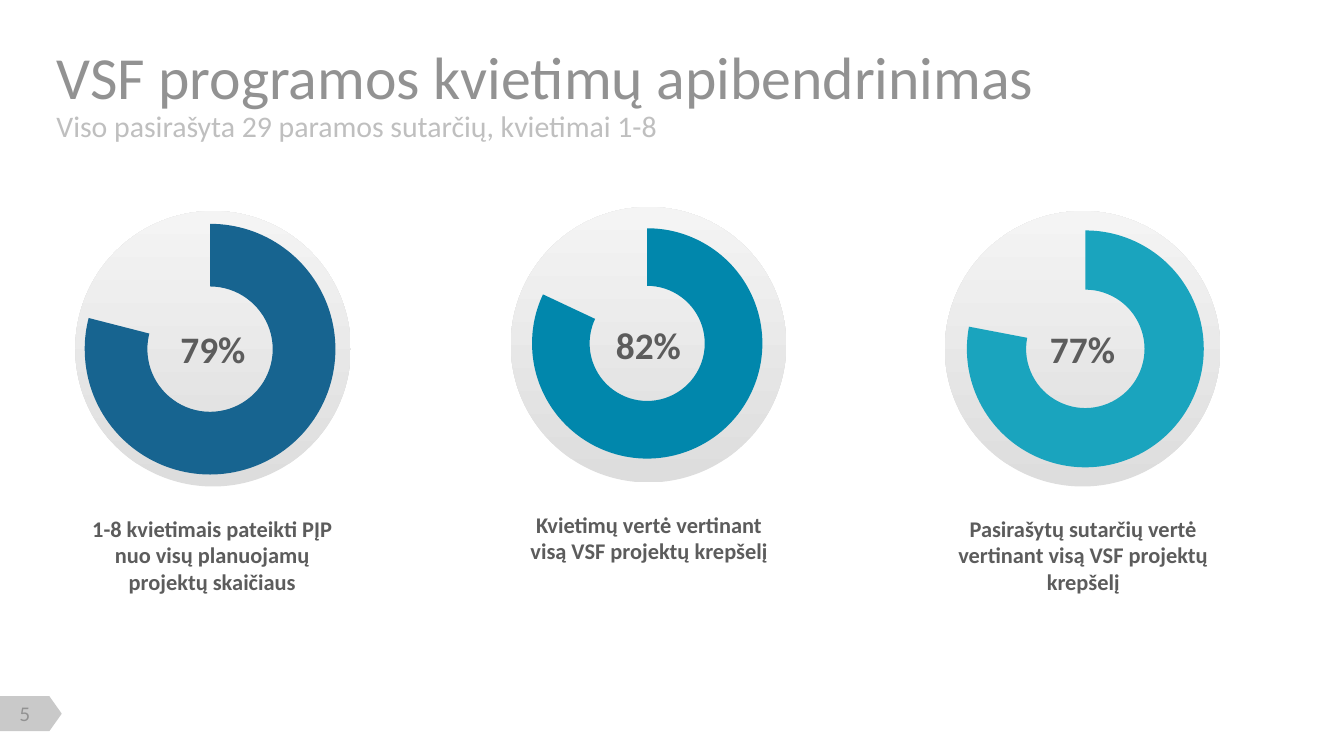
from dataclasses import dataclass

from lxml.etree import SubElement
from pptx import Presentation
from pptx.chart.data import CategoryChartData
from pptx.dml.color import RGBColor
from pptx.enum.chart import XL_CHART_TYPE
from pptx.enum.shapes import MSO_SHAPE
from pptx.enum.text import MSO_ANCHOR, PP_ALIGN
from pptx.oxml import parse_xml
from pptx.oxml.ns import nsdecls, qn
from pptx.util import Inches, Pt


@dataclass(frozen=True)
class Theme:
    font: str = "Calibri"
    tag_font: str = "Lato"
    title: str = "929292"
    sub: str = "BFBFBF"
    body: str = "5C5C5C"
    chart: str = "262626"
    tag: str = "C9C9C9"
    low: str = "DDDDDD"
    high: str = "F4F4F4"
    title_size: int = 32
    sub_size: int = 16
    value_size: int = 20
    note_size: int = 12
    tag_size: int = 10
    chart_size: int = 18


def color(code):
    return RGBColor.from_string(code)


def write(frame, text, *, size, ink, font, bold=False, align=PP_ALIGN.LEFT,
          anchor=MSO_ANCHOR.MIDDLE, inset=(0, 0, 0, 0)):
    """Put one formatted paragraph in a text frame."""
    frame.word_wrap = True
    frame.vertical_anchor = anchor
    (frame.margin_left, frame.margin_top,
     frame.margin_right, frame.margin_bottom) = map(Inches, inset)
    para = frame.paragraphs[0]
    para.alignment = align
    run = para.add_run()
    run.text = text
    run.font.size = Pt(size)
    run.font.name = font
    run.font.bold = bold
    run.font.color.rgb = color(ink)


class Deck:
    def __init__(self, theme, slide):
        self.theme = theme
        self.shapes = slide.shapes

    def text(self, box, text, **style):
        area = self.shapes.add_textbox(*map(Inches, box))
        write(area.text_frame, text, **style)

    def shape(self, kind, box):
        item = self.shapes.add_shape(kind, *map(Inches, box))
        item.shadow.inherit = False
        item.line.fill.background()
        return item

    def tag(self, number):
        t = self.theme
        mark = self.shape(MSO_SHAPE.FLOWCHART_OFFPAGE_CONNECTOR,
                          (0.1, 5.08, 0.26, 0.46))
        mark.rotation = 270
        mark.fill.solid()
        mark.fill.fore_color.rgb = color(t.tag)
        self.text((0.02, 5.23, 0.33, 0.17), number, size=t.tag_size,
                  ink=t.title, font=t.tag_font, align=PP_ALIGN.CENTER)

    def disc(self, left, top, label):
        t = self.theme
        disc = self.shape(MSO_SHAPE.OVAL, (left, top, 2.05, 2.05))
        disc.fill.gradient()
        disc.fill.gradient_angle = 90
        for stop, code in zip(disc.fill.gradient_stops, (t.low, t.high)):
            stop.color.rgb = color(code)
        write(disc.text_frame, label, size=t.value_size, ink=t.body,
              font=t.font, bold=True, align=PP_ALIGN.CENTER)

    def ring(self, box, share, fill, inner):
        t = self.theme
        data = CategoryChartData()
        data.categories = ["1", "2"]
        data.add_series("Series 1", (share, 100 - share))
        chart = self.shapes.add_chart(
            XL_CHART_TYPE.DOUGHNUT, *map(Inches, box), data).chart
        chart.has_title = False
        chart.has_legend = False
        chart.font.size = Pt(t.chart_size)
        chart.font.name = t.font
        chart.font.color.rgb = color(t.chart)
        plot = chart.plots[0]
        plot.vary_by_categories = True
        done, rest = (plot.series[0].points[i].format for i in range(2))
        done.fill.solid()
        done.fill.fore_color.rgb = color(fill)
        rest.fill.background()
        for part in (done, rest):
            part.line.fill.background()

        # Clear background, hole size and inner plot position
        root = chart.element
        root.find(qn("c:chart")).addnext(parse_xml(
            f'<c:spPr {nsdecls("c", "a")}><a:noFill/>'
            '<a:ln><a:noFill/></a:ln></c:spPr>'))
        next(root.iter(qn("c:holeSize"))).set("val", "64")
        area = next(root.iter(qn("c:plotArea")))
        for old in area.findall(qn("c:layout")):
            area.remove(old)
        layout = parse_xml(f'<c:layout {nsdecls("c")}/>')
        area.insert(0, layout)
        manual = SubElement(layout, qn("c:manualLayout"))
        rules = [("layoutTarget", "inner"), ("xMode", "edge"),
                 ("yMode", "edge"), *zip("xywh", inner)]
        for name, value in rules:
            SubElement(manual, qn(f"c:{name}")).set("val", str(value))

    def note(self, left, top, height, text):
        t = self.theme
        self.text((left, top, 1.9, height), text, size=t.note_size,
                  ink=t.body, font=t.font, bold=True,
                  align=PP_ALIGN.CENTER, anchor=MSO_ANCHOR.TOP)


# Disc place, label, ring box, share, colour, inner plot, note place, note
GAUGES = [
    ((0.56, 1.57), "79%", (0.5, 1.44, 2.17, 2.25), 79, "176490",
     (0.06, 0.1, 0.86, 0.83), (0.63, 3.83, 0.61),
     "1-8 kvietimais pateikti PĮP nuo visų planuojamų projektų skaičiaus"),
    ((3.8, 1.54), "82%", (3.72, 1.4, 2.17, 2.29), 82, "0187AC",
     (0.11, 0.13, 0.79, 0.75), (3.88, 3.8, 0.4),
     "Kvietimų vertė vertinant visą VSF projektų krepšelį"),
    ((7.03, 1.57), "77%", (6.98, 1.44, 2.17, 2.29), 78, "1AA4BE",
     (0.09, 0.12, 0.83, 0.77), (7.11, 3.83, 0.61),
     "Pasirašytų sutarčių vertė vertinant visą VSF projektų krepšelį"),
]


def main():
    # Widescreen page, 16 to 9
    show = Presentation()
    show.slide_width = Inches(10)
    show.slide_height = Inches(10 * 9 / 16)
    t = Theme()
    deck = Deck(t, show.slides.add_slide(show.slide_layouts[6]))

    # Page number
    deck.tag("5")

    # Gauge discs and rings
    for spot, label, *_ in GAUGES:
        deck.disc(*spot, label)
    for _, _, box, share, fill, inner, *_ in GAUGES:
        deck.ring(box, share, fill, inner)

    # Heading
    deck.text((0.42, 0.37, 9.15, 0.39),
              "VSF programos kvietimų apibendrinimas",
              size=t.title_size, ink=t.title, font=t.font,
              inset=(0, 0.05, 0.1, 0.05))

    # Gauge notes
    for *_, place, text in GAUGES:
        deck.note(*place, text)

    # Subheading
    deck.text((0.42, 0.84, 9.13, 0.19),
              "Viso pasirašyta 29 paramos sutarčių, kvietimai 1-8",
              size=t.sub_size, ink=t.sub, font=t.font)

    show.save("out.pptx")


if __name__ == "__main__":
    main()
